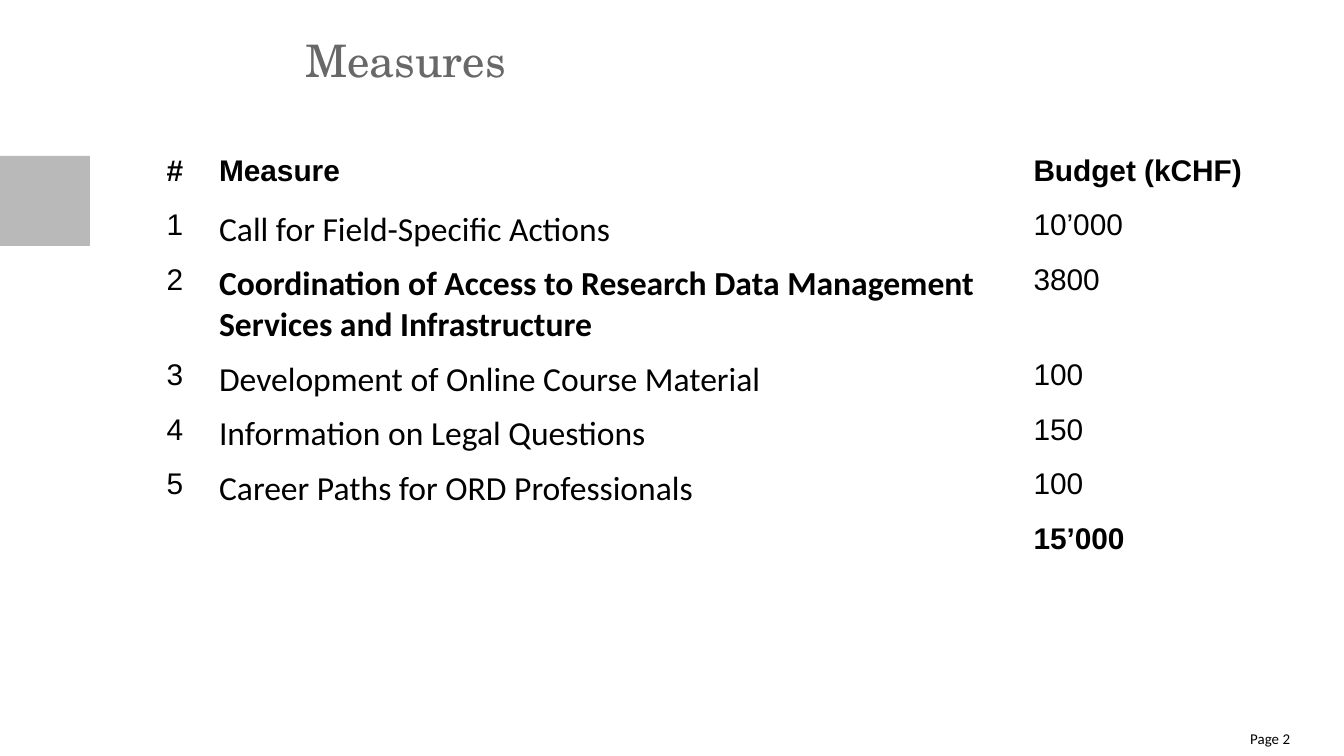
from pptx import Presentation
from pptx.dml.color import RGBColor
from pptx.enum import shapes, text
from pptx.util import Inches, Pt


def style(font, name, size, color, bold=False):
    font.name = name
    font.size = Pt(size)
    font.bold = bold
    font.color.rgb = RGBColor.from_string(color)


def add_label(slide, words, left, top, width, height, align):
    box = slide.shapes.add_textbox(Inches(left), Inches(top), Inches(width), Inches(height))
    frame = box.text_frame
    frame.word_wrap = True
    frame.margin_left = frame.margin_right = frame.margin_top = frame.margin_bottom = 0
    frame.vertical_anchor = text.MSO_ANCHOR.TOP
    frame.text = words
    frame.paragraphs[0].alignment = align
    return frame.paragraphs[0].font


prs = Presentation()
prs.slide_width = Inches(10)
prs.slide_height = Inches(10) * 9 // 16
slide = prs.slides.add_slide(prs.slide_layouts[6])

side_block = slide.shapes.add_shape(
    shapes.MSO_SHAPE.RECTANGLE, 0, Inches(1.16), Inches(0.67), Inches(0.67))
side_block.shadow.inherit = False
side_block.fill.solid()
side_block.fill.fore_color.rgb = RGBColor.from_string("B9B9B9")
side_block.line.fill.background()

measures = [
    ("#", "Measure", "Budget (kCHF)"),
    ("1", "Call for Field-Specific Actions", "10’000"),
    ("2", "Coordination of Access to Research Data Management\nServices and Infrastructure", "3800"),
    ("3", "Development of Online Course Material", "100"),
    ("4", "Information on Legal Questions", "150"),
    ("5", "Career Paths for ORD Professionals", "100"),
    ("", "", "15’000"),
]
bold_cells = {(0, 0), (0, 1), (0, 2), (2, 1), (6, 2)}
column_widths = [0.39, 6.06, 2.01]
row_height = Inches(2.84) // len(measures)

budget = slide.shapes.add_table(
    len(measures), len(column_widths), Inches(1.14), Inches(1.1),
    Inches(sum(column_widths)), row_height * len(measures)).table
budget.first_row = False
budget.horz_banding = False
for column, width in zip(budget.columns, column_widths):
    column.width = Inches(width)

for r, measure in enumerate(measures):
    budget.rows[r].height = row_height
    for c, words in enumerate(measure):
        cell = budget.cell(r, c)
        cell.fill.background()
        cell.text = words
        name, size = ("Calibri", 18) if c == 1 and r > 0 else ("Arial", 16)
        for paragraph in cell.text_frame.paragraphs:
            style(paragraph.font, name, size, "000000", (r, c) in bold_cells)

title = add_label(slide, "Measures", 2.27, 0.24, 7.34, 0.42, text.PP_ALIGN.LEFT)
style(title, "TeX Gyre Schola", 24, "686868")
page = add_label(slide, "Page 2", 8.97, 5.43, 0.63, 0.16, text.PP_ALIGN.RIGHT)
style(page, "Calibri", 8, "000000")

prs.save("out.pptx")
